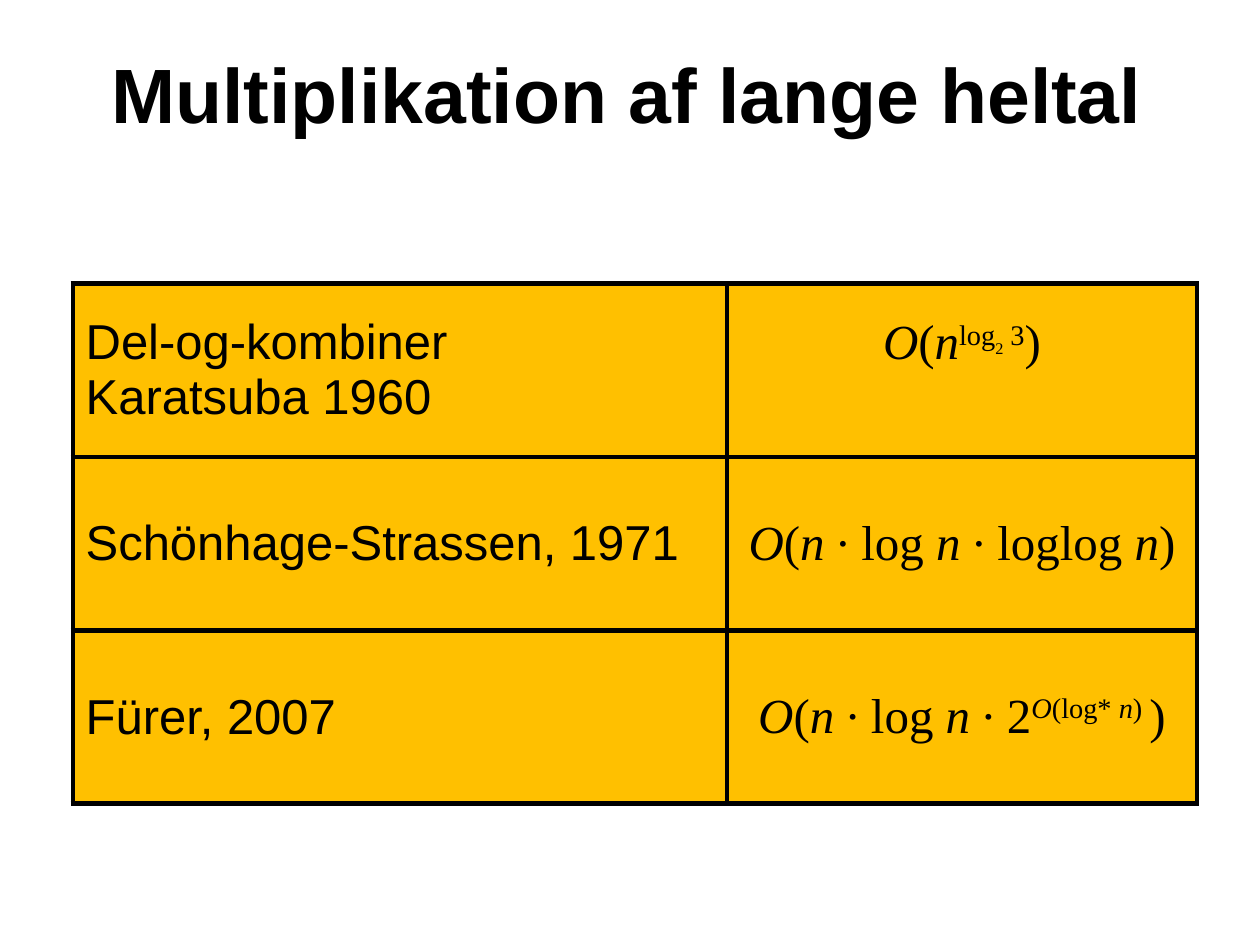
import pptx
import pptx.util
import pptx.dml.color
import pptx.enum.text
import pptx.oxml.ns
import lxml.etree

Inches = pptx.util.Inches
Pt = pptx.util.Pt
ALIGN = pptx.enum.text.PP_ALIGN
MIDDLE = pptx.enum.text.MSO_ANCHOR.MIDDLE
BLACK = pptx.dml.color.RGBColor(0x00, 0x00, 0x00)
GOLD = pptx.dml.color.RGBColor(0xFF, 0xC0, 0x00)
SANS = "Arial"
SERIF = "Times New Roman"
VARS = ("O", "n")
RAISE = 30
LOW = 20

ROWS = [
    ("Del-og-kombiner \vKaratsuba 1960",
     [("O", 0), ("(", 0), ("n", 0), ("log", RAISE), ("2", LOW),
      (" 3", RAISE), (")", 0)]),
    ("Schönhage-Strassen, 1971",
     [("O", 0), ("(", 0), ("n ", 0), ("∙ log ", 0), ("n ", 0),
      ("∙ loglog ", 0), ("n", 0), (")", 0)]),
    ("Fürer, 2007",
     [("O", 0), ("(", 0), ("n ", 0), ("∙ log ", 0), ("n ", 0),
      ("∙ 2", 0), ("O", RAISE), ("(log* ", RAISE), ("n", RAISE),
      (") ", RAISE), (")", 0)]),
]


def style(run, face, size, bold=False, slant=False):
    font = run.font
    font.name = face
    font.size = Pt(size)
    font.bold = bold
    font.italic = slant
    font.color.rgb = BLACK


def add_title(slide, box):
    title = slide.shapes.title
    title.left, title.top, title.width, title.height = box
    frame = title.text_frame
    frame.text = "Multiplikation af lange heltal"
    frame.word_wrap = True
    frame.vertical_anchor = MIDDLE
    para = frame.paragraphs[0]
    para.alignment = ALIGN.CENTER
    style(para.runs[0], SANS, 44, bold=True)


def add_edges(cell):
    props = cell._tc.get_or_add_tcPr()
    name = pptx.oxml.ns.qn
    for spot, side in enumerate(("a:lnL", "a:lnR", "a:lnT", "a:lnB")):
        line = lxml.etree.Element(name(side), w=str(Pt(3)))
        fill = lxml.etree.SubElement(line, name("a:solidFill"))
        lxml.etree.SubElement(fill, name("a:srgbClr"), val=str(BLACK))
        props.insert(spot, line)


def fill_label(cell, text):
    para = cell.text_frame.paragraphs[0]
    para.text = text
    para.alignment = ALIGN.LEFT
    for run in para.runs:
        style(run, SANS, 28)


def fill_bound(cell, parts):
    para = cell.text_frame.paragraphs[0]
    para.alignment = ALIGN.CENTER
    for text, lift in parts:
        run = para.add_run()
        run.text = text
        size = 16 if lift == LOW else 28
        style(run, SERIF, size, slant=text.strip() in VARS)
        if lift:
            run.font._element.set("baseline", str(lift * 1000))


def add_bounds(slide, box):
    table = slide.shapes.add_table(len(ROWS), 2, *box).table
    table.first_row = False
    table.horz_banding = False
    table.columns[0].width = Inches(5.19)
    table.columns[1].width = box[2] - Inches(5.19)
    for row, (label, parts) in zip(table.rows, ROWS):
        row.height = box[3] // len(ROWS)
        for cell in row.cells:
            cell.vertical_anchor = MIDDLE
            cell.fill.solid()
            cell.fill.fore_color.rgb = GOLD
            add_edges(cell)
        fill_label(row.cells[0], label)
        fill_bound(row.cells[1], parts)
    table.cell(0, 1).margin_bottom = Inches(0.48)


def main():
    deck = pptx.Presentation()
    deck.slide_width = Inches(10)
    deck.slide_height = Inches(7.5)
    slide = deck.slides.add_slide(deck.slide_layouts[5])
    add_title(slide, (Inches(0.48), Inches(0.11), Inches(9), Inches(1.25)))
    add_bounds(slide, (Inches(0.58), Inches(2.25), Inches(8.92), Inches(4.13)))
    deck.save("out.pptx")


if __name__ == "__main__":
    main()
